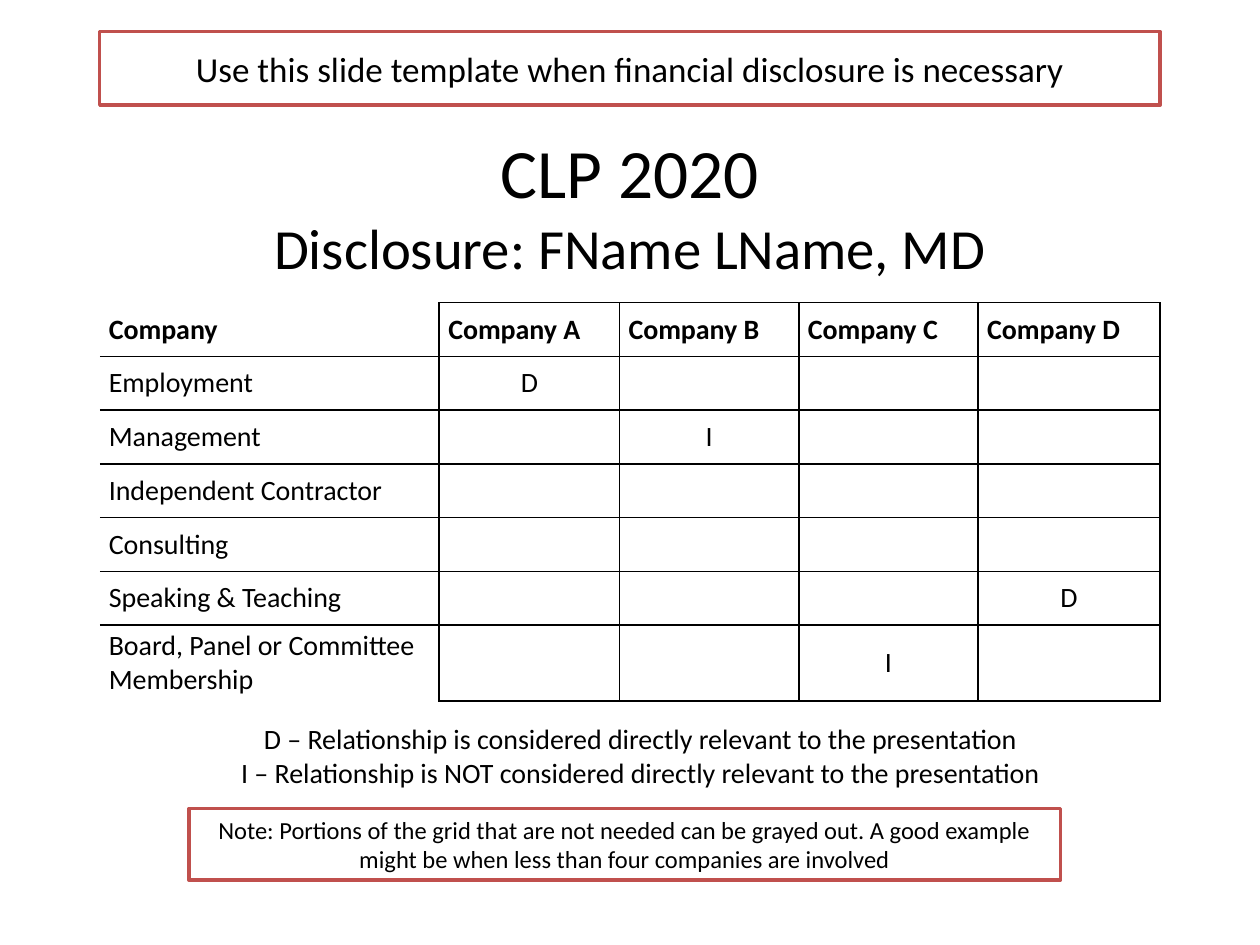
from lxml.etree import SubElement
from pptx import Presentation
from pptx.dml.color import RGBColor
from pptx.enum.shapes import MSO_SHAPE as SHAPE
from pptx.enum.text import MSO_ANCHOR as ANCHOR, PP_ALIGN as ALIGN
from pptx.oxml.ns import qn
from pptx.util import Pt

FONT, BLACK, WHITE, RED = "Calibri", "000000", "FFFFFF", "C0504D"

COMPANIES = ["Company A", "Company B", "Company C", "Company D"]
# Kind of relationship, and the mark under each company that has one
RELATIONSHIPS = [
    ("Employment", {"Company A": "D"}),
    ("Management", {"Company B": "I"}),
    ("Independent Contractor", {}),
    ("Consulting", {}),
    ("Speaking & Teaching", {"Company D": "D"}),
    ("Board, Panel or Committee Membership", {"Company C": "I"}),
]
COL_WIDTHS = [194, 103, 102.5, 102.5, 104]
ROW_HEIGHTS = [30.7] * 6 + [43.4]


def color(value):
    return RGBColor.from_string(value)


def style(p, size, align=ALIGN.CENTER, bold=False):
    p.alignment = align
    p.font.name, p.font.size, p.font.bold = FONT, Pt(size), bold
    p.font.color.rgb = color(BLACK)


def add_title(s, box, lines):
    """Centred title; each line has its own size."""
    tf = s.shapes.add_textbox(*map(Pt, box)).text_frame
    tf.word_wrap, tf.vertical_anchor = True, ANCHOR.MIDDLE
    p = tf.paragraphs[0]
    style(p, lines[0][1])
    for i, (text, size) in enumerate(lines):
        if i:
            p.add_line_break()
        r = p.add_run()
        r.text, r.font.size = text, Pt(size)


def add_text(s, box, lines, size):
    tf = s.shapes.add_textbox(*map(Pt, box)).text_frame
    tf.word_wrap = True
    tf.text = "\n".join(lines)
    for p in tf.paragraphs:
        style(p, size)


def add_notice(s, box, text, size, space=0):
    """White box with a red outline."""
    sp = s.shapes.add_shape(SHAPE.RECTANGLE, *map(Pt, box))
    sp.shadow.inherit = False
    sp.fill.solid()
    sp.fill.fore_color.rgb = color(WHITE)
    sp.line.color.rgb = color(RED)
    sp.line.width = Pt(2)
    tf = sp.text_frame
    tf.word_wrap, tf.vertical_anchor = True, ANCHOR.MIDDLE
    p = tf.paragraphs[0]
    p.text = text
    p.space_before = p.space_after = Pt(space)
    style(p, size)


def set_borders(cell, sides):
    """Draw the sides named by the letters L, R, T and B; hide the others."""
    tc_pr = cell._tc.get_or_add_tcPr()
    for side in "LRTB":
        ln = SubElement(tc_pr, qn(f"a:ln{side}"), w=str(Pt(1)))
        if side in sides:
            fill = SubElement(ln, qn("a:solidFill"))
            SubElement(fill, qn("a:srgbClr"), val=BLACK)
        else:
            SubElement(ln, qn("a:noFill"))


def add_grid(s, left, top):
    rows = [["Company"] + COMPANIES]
    rows += [[kind] + [marks.get(c, "") for c in COMPANIES]
             for kind, marks in RELATIONSHIPS]
    table = s.shapes.add_table(
        len(rows), len(rows[0]), Pt(left), Pt(top),
        Pt(sum(COL_WIDTHS)), Pt(sum(ROW_HEIGHTS))).table
    table.first_row = table.horz_banding = False
    for col, width in zip(table.columns, COL_WIDTHS):
        col.width = Pt(width)
    for row, height in zip(table.rows, ROW_HEIGHTS):
        row.height = Pt(height)

    for i, row in enumerate(rows):
        for j, text in enumerate(row):
            cell = table.cell(i, j)
            # The label column is open at its left, top and bottom
            sides = "LRTB"
            if j == 0:
                sides = "R" + "T" * (i > 0) + "B" * (i < len(rows) - 1)
            set_borders(cell, sides)
            cell.fill.background()
            cell.vertical_anchor = ANCHOR.MIDDLE
            cell.margin_left = cell.margin_right = Pt(5.2)
            cell.margin_top = cell.margin_bottom = 0
            cell.text = text
            align = ALIGN.CENTER if i and j else ALIGN.LEFT
            style(cell.text_frame.paragraphs[0], 16, align, bold=i == 0)


def main():
    prs = Presentation()
    prs.slide_width, prs.slide_height = Pt(720), Pt(540)
    s = prs.slides.add_slide(prs.slide_layouts[6])

    # Heading
    add_title(s, (36, 72, 648, 90),
              [("CLP 2020", 39.6), ("Disclosure: FName LName, MD", 32.4)])
    # Disclosure grid and its key
    add_grid(s, 57, 173)
    add_text(s, (48, 409, 636, 46), [
        "D – Relationship is considered directly relevant to the presentation",
        "I – Relationship is NOT considered directly relevant to the presentation",
    ], 16)
    # Instructions to the presenter
    add_notice(s, (108, 462, 498, 41),
               "Note: Portions of the grid that are not needed can be grayed out. "
               "A good example might be when less than four companies are involved", 14)
    add_notice(s, (57, 18, 606, 42),
               "Use this slide template when financial disclosure is necessary", 20, space=6)

    prs.save("out.pptx")


if __name__ == "__main__":
    main()
